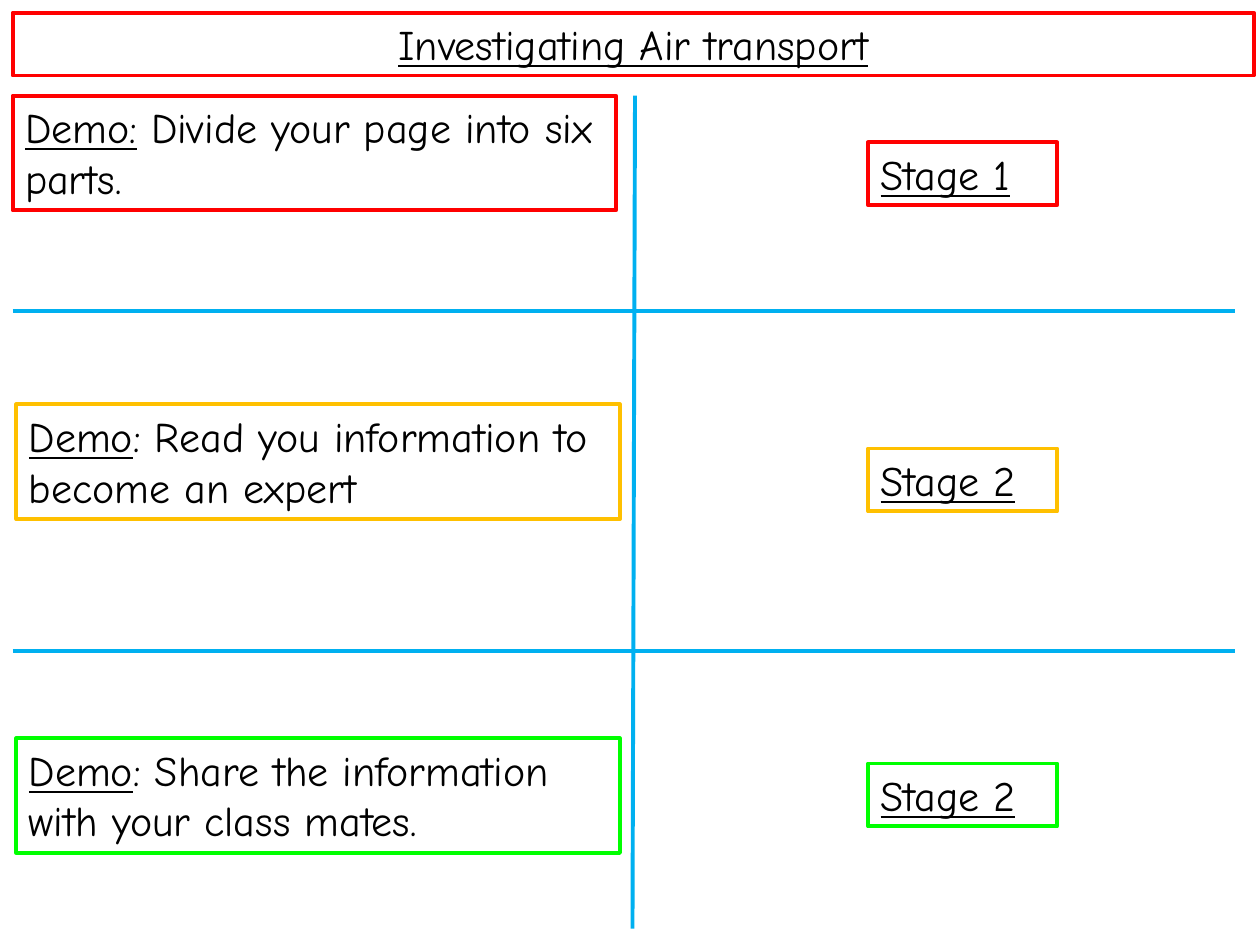
from dataclasses import dataclass

from lxml.etree import SubElement
from pptx import Presentation
from pptx.dml.color import RGBColor
from pptx.enum.shapes import MSO_CONNECTOR
from pptx.enum.text import MSO_AUTO_SIZE, PP_ALIGN
from pptx.oxml.ns import qn
from pptx.slide import Slide
from pptx.util import Inches, Pt


@dataclass(frozen=True)
class Theme:
    font: str = "Comic Neue"
    size: float = 24
    line: float = 2.25
    text: str = "000000"
    grid: str = "00B0F0"
    red: str = "FF0000"
    amber: str = "FFC000"
    green: str = "00FF00"


@dataclass(frozen=True)
class Stage:
    color: str
    label: str
    head: str
    body: str
    left: float
    top: float
    tag_top: float


THEME = Theme()
EDGE = 0.1
DEMO_W, DEMO_H = 4.79, 0.91
TAG_X, TAG_W, TAG_H = 6.89, 1.5, 0.5

STAGES = [
    Stage(THEME.red, "Stage 1", "Demo:",
          " Divide your page into six parts.", EDGE, 0.76, 1.13),
    Stage(THEME.amber, "Stage 2", "Demo",
          ": Read you information to become an expert", 0.13, 3.21, 3.56),
    Stage(THEME.green, "Stage 2", "Demo",
          ": Share the information with your class mates.", 0.13, 5.86, 6.06),
]


def add_box(slide: Slide, head: str, *, left: float, top: float, width: float,
            height: float, color: str, body: str = "",
            align: PP_ALIGN = PP_ALIGN.LEFT) -> None:
    """Draw a framed text box: underlined head, then plain body."""
    box = slide.shapes.add_textbox(
        Inches(left), Inches(top), Inches(width), Inches(height))
    box.line.color.rgb = RGBColor.from_string(color)
    box.line.width = Pt(THEME.line)
    frame = box.text_frame
    frame.word_wrap = True
    frame.auto_size = MSO_AUTO_SIZE.SHAPE_TO_FIT_TEXT
    para = frame.paragraphs[0]
    para.alignment = align
    for text, under in ((head, True), (body, False)):
        if text:
            run = para.add_run()
            run.text = text
            run.font.name = THEME.font
            run.font.size = Pt(THEME.size)
            run.font.underline = under
            run.font.color.rgb = RGBColor.from_string(THEME.text)


def add_line(slide: Slide, x1: float, y1: float, x2: float, y2: float) -> None:
    """Draw one grid line without a shadow."""
    line = slide.shapes.add_connector(
        MSO_CONNECTOR.STRAIGHT, Inches(x1), Inches(y1), Inches(x2), Inches(y2))
    line.line.color.rgb = RGBColor.from_string(THEME.grid)
    line.line.width = Pt(THEME.line)
    SubElement(line._element.spPr, qn("a:effectLst"))


def main() -> None:
    deck = Presentation()
    deck.slide_width, deck.slide_height = Inches(10), Inches(7.5)
    slide = deck.slides.add_slide(deck.slide_layouts[6])

    # Title
    add_box(slide, "Investigating Air transport", left=EDGE, top=EDGE,
            width=9.85, height=0.5, color=THEME.red, align=PP_ALIGN.CENTER)

    # Grid of six parts
    add_line(slide, 5.02, 7.37, 5.04, 0.76)
    for y in (2.47, 5.17):
        add_line(slide, EDGE, y, 9.8, y)

    # Demo and stage label in each row
    for stage in STAGES:
        add_box(slide, stage.head, body=stage.body, left=stage.left,
                top=stage.top, width=DEMO_W, height=DEMO_H, color=stage.color)
        add_box(slide, stage.label, left=TAG_X, top=stage.tag_top,
                width=TAG_W, height=TAG_H, color=stage.color)

    deck.save("out.pptx")


if __name__ == "__main__":
    main()
